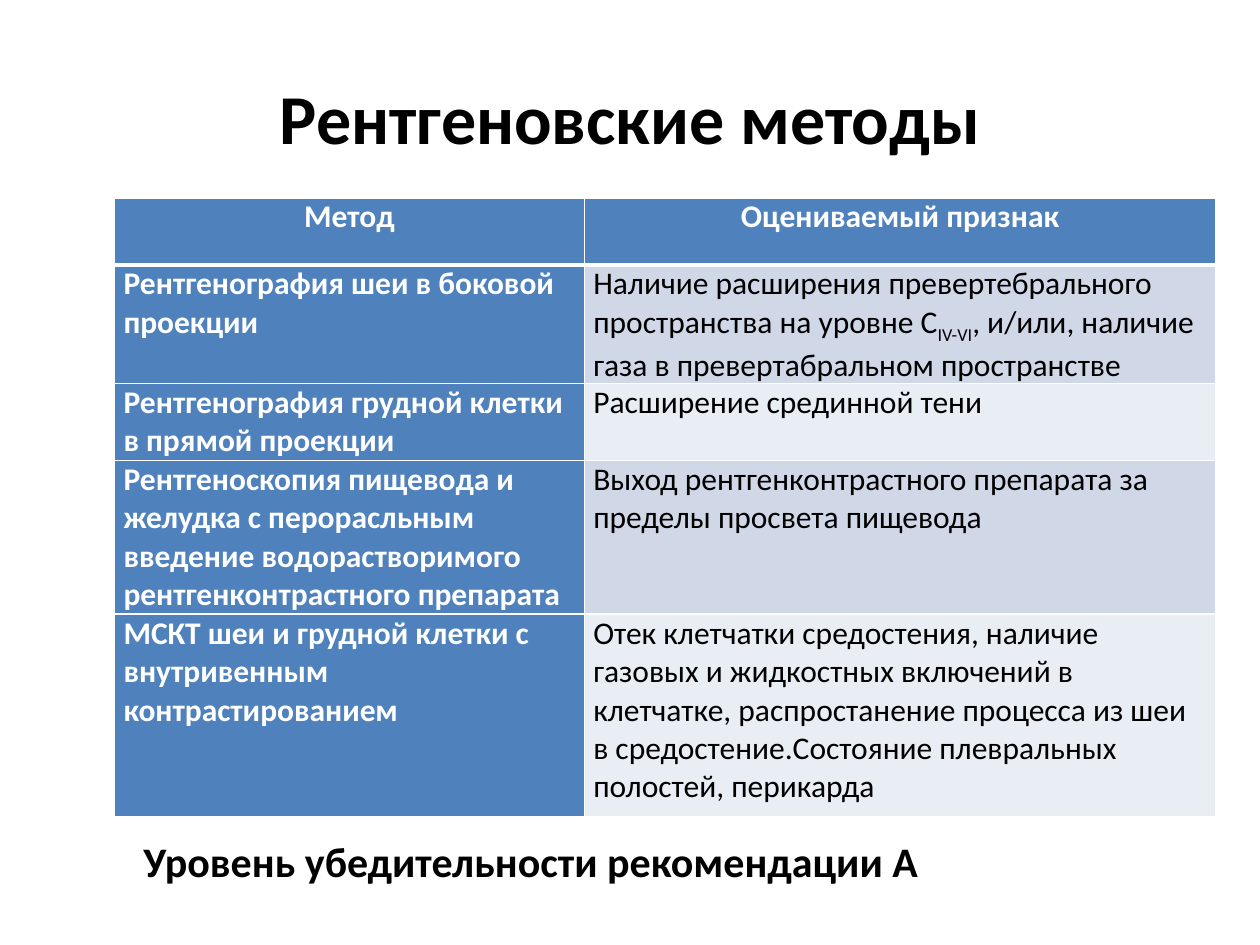
from lxml.etree import SubElement
from pptx import Presentation
from pptx.dml.color import RGBColor
from pptx.enum.text import MSO_ANCHOR, PP_ALIGN
from pptx.oxml.ns import qn
from pptx.util import Cm, Pt

COLORS = {
    "text": "000000",
    "light": "FFFFFF",
    "accent": "4F81BD",
    "band_dark": "D0D8E8",
    "band_light": "E9EDF4",
}
HEADER = ("Метод", "Оцениваемый признак")
METHODS = [
    ("Рентгенография шеи в боковой проекции",
     ("Наличие расширения превертебрального пространства на уровне C", "IV-VI",
      ", и/или, наличие газа в превертабральном пространстве")),
    ("Рентгенография грудной клетки в прямой проекции",
     "Расширение срединной тени"),
    ("Рентгеноскопия пищевода и желудка с перорасльным введение "
     "водорастворимого рентгенконтрастного препарата",
     "Выход рентгенконтрастного препарата за пределы просвета пищевода"),
    ("МСКТ шеи и грудной клетки с внутривенным контрастированием",
     "Отек клетчатки средостения, наличие газовых и жидкостных включений в "
     "клетчатке, распростанение процесса из шеи в средостение."
     "Состояние плевральных полостей, перикарда"),
]
COLUMN_WIDTHS = (9.47, 12.73)
ROW_HEIGHTS = (1.35, 2.39, 1.55, 3.1, 4.09)


def write_text(frame, text, size=18, color="text", bold=False, align=PP_ALIGN.LEFT):
    paragraph = frame.paragraphs[0]
    paragraph.alignment = align
    parts = (text,) if isinstance(text, str) else text
    for index, part in enumerate(parts):
        run = paragraph.add_run()
        run.text = part
        run.font.name = "Calibri"
        run.font.size = Pt(size)
        run.font.bold = bold
        run.font.color.rgb = RGBColor.from_string(COLORS[color])
        if index % 2:
            run.font._element.set("baseline", "-25000")


class SlideBuilder:
    def __init__(self, presentation):
        self.slide = presentation.slides.add_slide(presentation.slide_layouts[6])

    def add_text(self, text, left, top, width, height, size, anchor=MSO_ANCHOR.TOP):
        shape = self.slide.shapes.add_textbox(Cm(left), Cm(top), Cm(width), Cm(height))
        frame = shape.text_frame
        frame.word_wrap = True
        frame.vertical_anchor = anchor
        write_text(frame, text, size=size, bold=True, align=PP_ALIGN.CENTER)

    def add_borders(self, cell, widths):
        properties = cell._tc.get_or_add_tcPr()
        for side, width in widths.items():
            line = SubElement(properties, qn(f"a:ln{side}"), w=str(Pt(width)))
            fill = SubElement(line, qn("a:solidFill"))
            SubElement(fill, qn("a:srgbClr"), val=COLORS["light"])

    def add_table(self, rows, left, top):
        shape = self.slide.shapes.add_table(
            len(rows), len(COLUMN_WIDTHS), Cm(left), Cm(top),
            Cm(sum(COLUMN_WIDTHS)), Cm(sum(ROW_HEIGHTS)))
        table = shape.table
        for column, width in zip(table.columns, COLUMN_WIDTHS):
            column.width = Cm(width)
        for row, height in zip(table.rows, ROW_HEIGHTS):
            row.height = Cm(height)
        for row_index, texts in enumerate(rows):
            for column_index, text in enumerate(texts):
                self.fill_cell(table.cell(row_index, column_index), text,
                               row_index, column_index)

    def fill_cell(self, cell, text, row_index, column_index):
        is_header = row_index == 0
        is_accent = is_header or column_index == 0
        band = "band_dark" if row_index % 2 else "band_light"
        cell.margin_left = cell.margin_right = Cm(0.18)
        cell.margin_top = cell.margin_bottom = 0
        self.add_borders(cell, {"L": 1, "R": 1, "T": 3 if row_index == 1 else 1,
                                "B": 3 if is_header else 1})
        cell.fill.solid()
        cell.fill.fore_color.rgb = RGBColor.from_string(
            COLORS["accent" if is_accent else band])
        write_text(cell.text_frame, text, bold=is_accent,
                   color="light" if is_accent else "text",
                   align=PP_ALIGN.CENTER if is_header else PP_ALIGN.LEFT)


def main():
    presentation = Presentation()
    presentation.slide_width = Cm(25.4)
    presentation.slide_height = Cm(19.05)
    builder = SlideBuilder(presentation)
    builder.add_text("Рентгеновские методы", 1.27, 0.76, 22.86, 3.18, 40,
                     anchor=MSO_ANCHOR.MIDDLE)
    builder.add_table([HEADER, *METHODS], 2.31, 3.99)
    builder.add_text("Уровень убедительности рекомендации А", 1.9, 16.71, 17.6, 1.27, 24)
    presentation.save("out.pptx")


if __name__ == "__main__":
    main()
